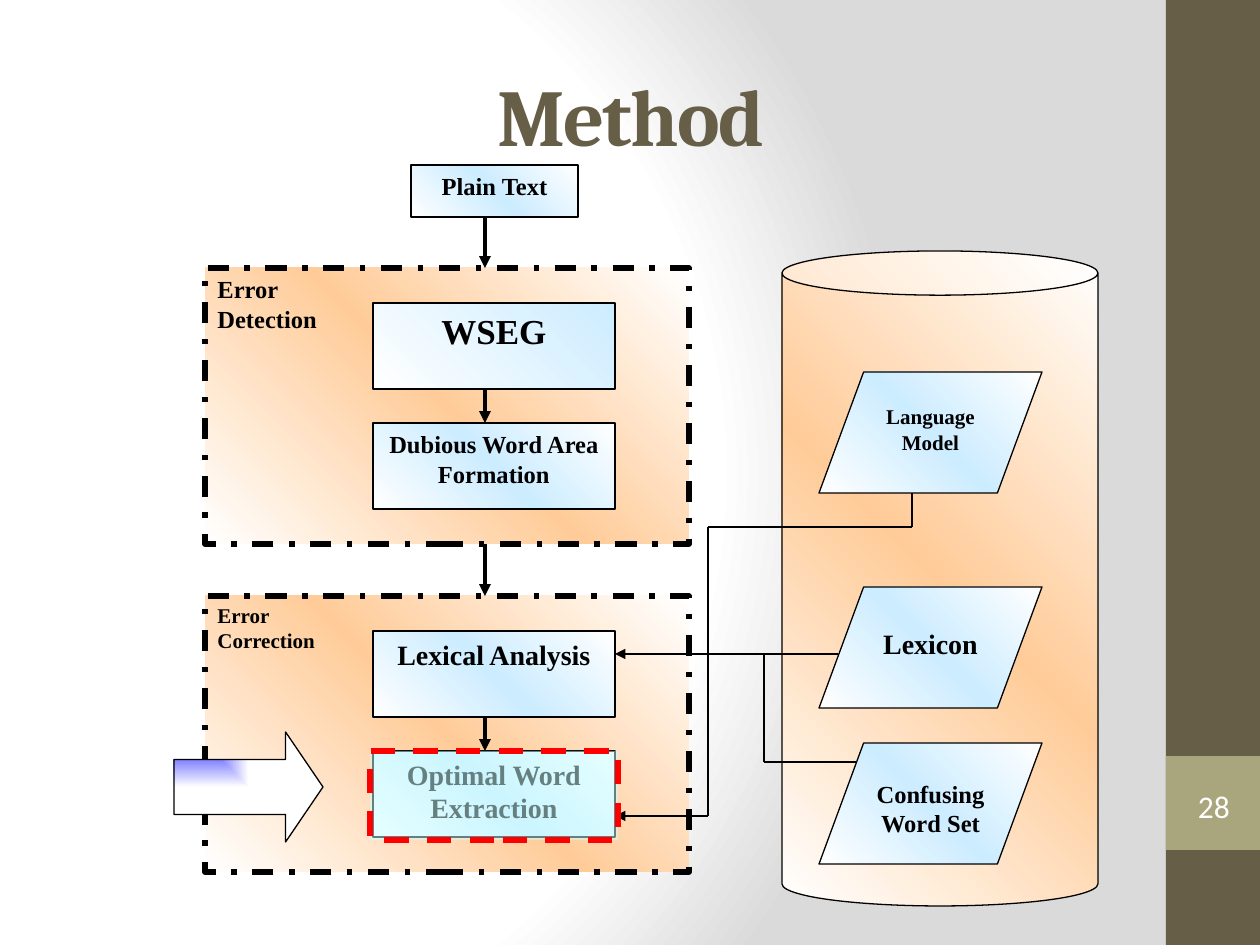
from lxml import etree
from pptx import Presentation
from pptx import util as u
from pptx.dml.color import RGBColor
from pptx.enum import dml, shapes, text
from pptx.oxml import parse_xml
from pptx.oxml.ns import nsdecls, qn

# Gradients: stops, then direction
LINEAR = '<a:lin ang="18900000" scaled="1"/>'
ROUND = ('<a:path path="circle"><a:fillToRect l="20000" t="50000" r="100000" '
         'b="50000"/></a:path>')
CORNER = '<a:path path="rect"><a:fillToRect r="100000" b="100000"/></a:path>'
SKY = ([(0, "white"), (50, "sky"), (100, "white")], LINEAR)
HALF = ([(0, "white"), (100, "sky")], LINEAR)
PEACH = ([(0, "white"), (50, "peach"), (100, "white")], LINEAR)
GLOW = ([(0, "blue"), (100, "white")], CORNER)
BACK = ([(0, "white"), (75, "white"), (100, "gray")], ROUND)

# Content; all lengths in px
INK = {"white": "FFFFFF", "black": "000000", "brown": "675E47", "olive": "A9A57C",
       "gray": "DADADA", "sky": "CCECFF", "peach": "FFCC99", "blue": "0000FF",
       "red": "FF0000", "aqua": "CCFFFF"}
SERIF = "Times New Roman"
STAGES = [  # top, label, label size, then two steps: name, size, fill
    (268, "Error\nDetection", 14,
     ("WSEG", 20, HALF), ("Dubious Word Area Formation", 14, SKY)),
    (596, "Error\nCorrection", 12,
     ("Lexical Analysis", 16, SKY), ("Optimal Word Extraction", 16, SKY)),
]
STORES = [(372, "Language Model", 12), (587, "Lexicon", 16), (743, "Confusing Word Set", 14)]
LINKS = [  # x1, y1, x2, y2, arrow at the end
    (912, 493, 912, 527, False), (912, 527, 708, 527, False),
    (708, 527, 708, 816, False), (708, 816, 615, 816, True),
    (838, 654, 764, 654, False), (764, 654, 615, 654, True),
    (857, 762, 764, 762, False), (764, 762, 764, 654, False),
]
STEP_X, STEP_W, STEP_H, STEP_DY = 373, 242, 86, (35, 155)
STAGE_X, STAGE_W, STAGE_H = 205, 484, 276
FLOW_X = 485

prs = Presentation()


def px(n):
    return u.Emu(round(n * 914400 / 126))


def rgb(name):
    return RGBColor.from_string(INK[name])


prs.slide_width, prs.slide_height = px(1260), px(945)
slide = prs.slides.add_slide(prs.slide_layouts[6])
KIND = shapes.MSO_SHAPE


def blend(fill, root, grad):
    """Put a gradient in the place of an empty fill."""
    fill.background()
    stops = "".join(f'<a:gs pos="{p * 1000}"><a:srgbClr val="{INK[c]}"/></a:gs>'
                    for p, c in grad[0])
    xml = (f'<a:gradFill {nsdecls("a")} rotWithShape="1"><a:gsLst>{stops}</a:gsLst>'
           f'{grad[1]}</a:gradFill>')
    old = root.find(".//" + qn("a:noFill"))
    old.getparent().replace(old, parse_xml(xml))


def draw(kind, box, fill=None, line="black", wide=0.75, dash=None, adj=()):
    shape = slide.shapes.add_shape(kind, *map(px, box))
    shape.shadow.inherit = False
    for i, val in enumerate(adj):
        shape.adjustments[i] = val
    if isinstance(fill, tuple):
        blend(shape.fill, shape._element.spPr, fill)
    elif fill:
        shape.fill.solid()
        shape.fill.fore_color.rgb = rgb(fill)
    else:
        shape.fill.background()
    if line:
        shape.line.color.rgb = rgb(line)
        shape.line.width = u.Pt(wide)
        shape.line.dash_style = dash
    else:
        shape.line.fill.background()
    return shape


def write(shape, words, size, align="CENTER", anchor="TOP", font=SERIF,
          ink="black", bold=True, **inset):
    frame = shape.text_frame
    frame.text = words
    frame.word_wrap = True
    frame.vertical_anchor = text.MSO_ANCHOR[anchor]
    for side, val in inset.items():
        setattr(frame, "margin_" + side, px(val))
    style = {"name": font, "size": u.Pt(size), "bold": bold}
    for para in frame.paragraphs:
        para.alignment = text.PP_ALIGN[align]
        for key, val in style.items():
            setattr(para.runs[0].font, key, val)
        para.runs[0].font.color.rgb = rgb(ink)
    return frame


def link(x1, y1, x2, y2, arrow=True, wide=2.25):
    line = slide.shapes.add_connector(shapes.MSO_CONNECTOR.STRAIGHT,
                                      *map(px, (x1, y1, x2, y2)))
    line.line.color.rgb = rgb("black")
    line.line.width = u.Pt(wide)
    if arrow:
        etree.SubElement(line.line._get_or_add_ln(), qn("a:tailEnd"), type="triangle")
    etree.SubElement(line._element.spPr, qn("a:effectLst"))


# Background, side bar, title and page number
blend(slide.background.fill, slide._element, BACK)
draw(KIND.RECTANGLE, (1166, 0, 94, 945), "brown", None)
draw(KIND.RECTANGLE, (1166, 756, 94, 94), "olive", None)
title = slide.shapes.add_textbox(*map(px, (42, 35, 1177, 158)))
frame = write(title, "Method", 46, anchor="MIDDLE", font="Cambria", ink="brown")
frame.paragraphs[0].runs[0].font._element.set("spc", "-100")
page = draw(KIND.DOUBLE_BRACKET, (1176, 779, 76, 54), line=None, adj=[0.18])
write(page, "28", 18, anchor="MIDDLE", font="Calibri", ink="white", bold=False,
      left=0, top=0, right=0, bottom=0)

# Input and the two stages, each with two steps
write(draw(KIND.RECTANGLE, (411, 165, 167, 52), SKY), "Plain Text", 14)
above = 217
for top, label, size, *steps in STAGES:
    stage = draw(KIND.RECTANGLE, (STAGE_X, top, STAGE_W, STAGE_H), PEACH,
                 wide=3, dash=dml.MSO_LINE.DASH_DOT)
    write(stage, label, size, align="LEFT")
    link(FLOW_X, above, FLOW_X, top)
    for dy, (name, big, fill) in zip(STEP_DY, steps):
        step = draw(KIND.RECTANGLE, (STEP_X, top + dy, STEP_W, STEP_H), fill)
        write(step, name, big)
    link(FLOW_X, top + STEP_DY[0] + STEP_H, FLOW_X, top + STEP_DY[1])
    above = top + STAGE_H

# Data stores in the cylinder; labels start one line down
draw(KIND.CAN, (782, 251, 316, 655), PEACH, adj=[0.14])
for top, name, size in STORES:
    store = draw(KIND.FLOWCHART_DATA, (819, top, 223, 121), SKY)
    write(store, name, size, top=8 + 2 * size)
for x1, y1, x2, y2, arrow in LINKS:
    link(x1, y1, x2, y2, arrow, 1)

# Pointer and highlight on the current step
draw(KIND.RIGHT_ARROW, (174, 732, 149, 110), GLOW, adj=[0.5, 0.34])
mark = draw(KIND.RECTANGLE, (370, 751, 248, 89), "aqua", "red", 3.5, dml.MSO_LINE.DASH)
tint = mark._element.spPr.find(qn("a:solidFill")).find(qn("a:srgbClr"))
etree.SubElement(tint, qn("a:alpha"), val="50000")

prs.save("out.pptx")
